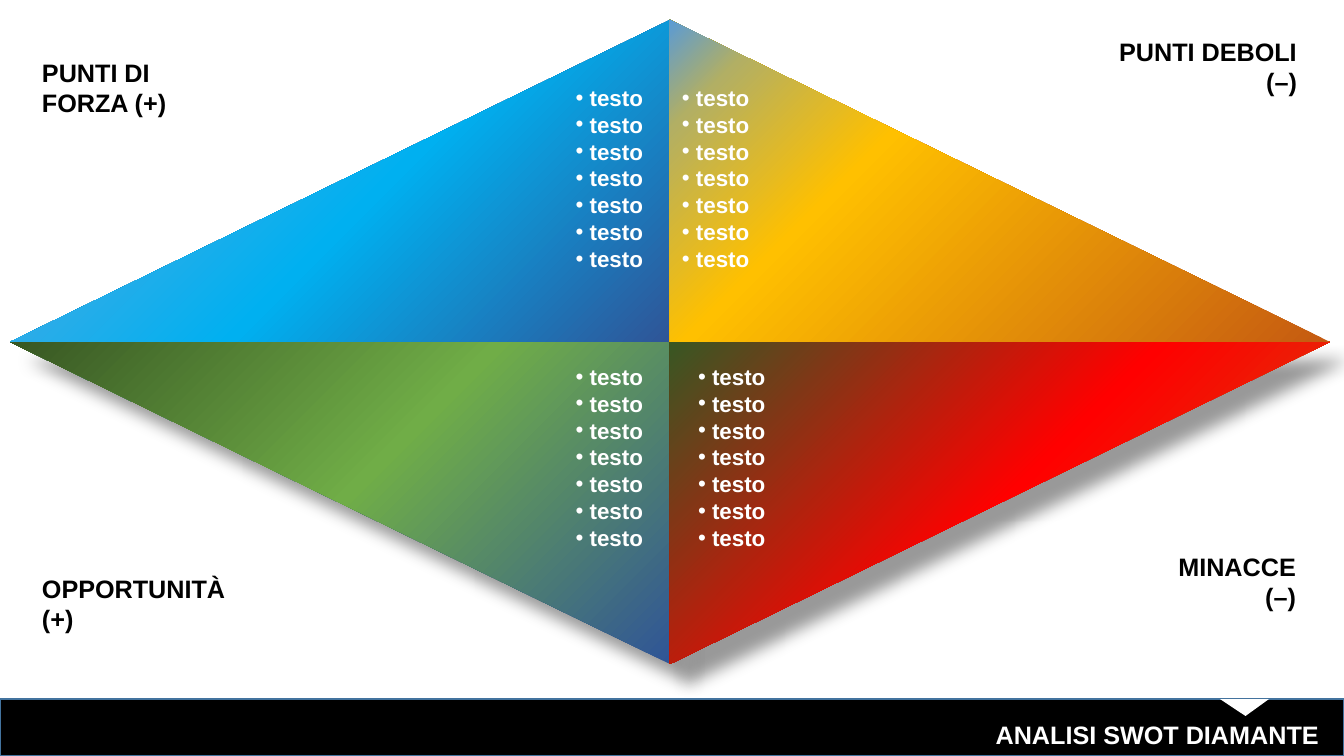
import pptx
import pptx.dml.color
import pptx.enum.shapes
import pptx.enum.text
import pptx.oxml
import pptx.oxml.ns
import pptx.util

PX = 914400 / 100.8  # EMU in one px
LEFT = pptx.enum.text.PP_ALIGN.LEFT
RIGHT = pptx.enum.text.PP_ALIGN.RIGHT
NS = pptx.oxml.ns.nsdecls("a")


def px(n):
    return pptx.util.Emu(round(n * PX))


def rgb(color):
    return pptx.dml.color.RGBColor.from_string(color)


def place(sp, box):
    sp.left, sp.top, sp.width, sp.height = map(px, box)


def write(sp, lines, size, color, align):
    tf = sp.text_frame
    tf.word_wrap = True
    tf.auto_size = pptx.enum.text.MSO_AUTO_SIZE.NONE
    tf.vertical_anchor = pptx.enum.text.MSO_ANCHOR.TOP
    tf.margin_left = tf.margin_right = px(10)
    tf.margin_top = tf.margin_bottom = px(5)
    tf.text = "\n".join(lines)
    for p in tf.paragraphs:
        p.alignment = align
        p.line_spacing = 1
        p.space_before = p.space_after = pptx.util.Pt(0)
        p.font.name, p.font.size, p.font.bold = "Arial", pptx.util.Pt(size), True
        p.font.color.rgb = rgb(color)


def add_footer(s, box):
    x, y, w, h = box
    kinds = pptx.enum.shapes.MSO_SHAPE
    bar = s.shapes.add_shape(kinds.RECTANGLE, *map(px, box))
    notch = s.shapes.add_shape(
        kinds.ISOSCELES_TRIANGLE, px(x + w - 124), px(y), px(49), px(17))
    notch.rotation = 180
    notch.adjustments[0] = 0.48
    for sp, color in ((bar, "000000"), (notch, "FFFFFF")):
        sp.shadow.inherit = False
        sp.fill.solid()
        sp.fill.fore_color.rgb = rgb(color)
    bar.line.color.rgb = rgb("43739E")
    bar.line.width = pptx.util.Pt(1)
    notch.line.fill.background()

    title = s.shapes.title
    place(title, (x + w - 698, y + 15, 683, 40))
    write(title, ["ANALISI SWOT DIAMANTE"], 18, "FFFFFF", RIGHT)
    s.shapes.element.append(title.element)  # in front of the bar


def add_gradient(sp, stops):
    sp.fill.gradient()
    grad = sp.element.spPr.find(pptx.oxml.ns.qn("a:gradFill"))
    for child in list(grad):
        grad.remove(child)
    marks = "".join(
        f'<a:gs pos="{pos * 1000}"><a:srgbClr val="{color}"/></a:gs>'
        for pos, color in stops)
    grad.append(pptx.oxml.parse_xml(f"<a:gsLst {NS}>{marks}</a:gsLst>"))
    grad.append(pptx.oxml.parse_xml(
        f'<a:path {NS} path="circle">'
        '<a:fillToRect r="100000" b="100000"/></a:path>'))


def add_shadow(sp):
    effects = sp.element.spPr.find(pptx.oxml.ns.qn("a:effectLst"))
    effects.append(pptx.oxml.parse_xml(
        f'<a:outerShdw {NS} blurRad="{pptx.util.Pt(12)}" '
        f'dist="{pptx.util.Pt(19)}" dir="2700000" algn="tl" rotWithShape="0">'
        '<a:srgbClr val="000000"><a:alpha val="40000"/></a:srgbClr>'
        '</a:outerShdw>'))


def add_diamond(s, box, quarters):
    x, y, w, h = box
    cx, cy = x + w / 2, y + h / 2
    for side, half, stops in quarters:
        builder = s.shapes.build_freeform(cx, cy + half * h / 2, scale=PX)
        builder.add_line_segments([(cx + side * w / 2, cy), (cx, cy)])
        sp = builder.convert_to_shape()
        add_gradient(sp, stops)
        sp.line.fill.background()
        sp.shadow.inherit = False
        if half > 0:
            add_shadow(sp)


def add_list(s, sp, box, lines, align):
    place(sp, box)
    write(sp, lines, 16, "FFFFFF", align)
    for p in sp.text_frame.paragraphs:
        pPr = p._p.get_or_add_pPr()
        pPr.set("marL", str(px(14)))
        pPr.set("indent", str(px(-14)))
        bullet = pptx.oxml.parse_xml(f'<a:buChar {NS} char="•"/>')
        pPr.insert_element_before(bullet, "a:tabLst", "a:defRPr", "a:extLst")
    s.shapes.element.append(sp.element)  # in front of the diamond


def add_label(s, box, lines, align):
    sp = s.shapes.add_textbox(*map(px, box))
    write(sp, lines, 18, "000000", align)


def build_swot(prs):
    s = prs.slides.add_slide(prs.slide_layouts[4])
    add_footer(s, (0, 699, 1344, 57))

    # Corner labels
    for box, lines, align in (
        ((32, 52, 198, 72), ["PUNTI DI FORZA (+)"], LEFT),
        ((32, 568, 252, 72), ["OPPORTUNITÀ", "(+)"], LEFT),
        ((1080, 31, 227, 72), ["PUNTI DEBOLI (–)"], RIGHT),
        ((1054, 546, 252, 72), ["MINACCE", "(–)"], RIGHT),
    ):
        add_label(s, box, lines, align)

    # Quarters: side (-1 left, 1 right), half (-1 top, 1 bottom), stops
    add_diamond(s, (10, 20, 1320, 644), (
        (-1, 1, ((0, "385723"), (50, "70AD47"), (100, "2F5597"))),
        (-1, -1, ((0, "71A6DB"), (55, "00B0F0"), (100, "2F5597"))),
        (1, 1, ((0, "385723"), (50, "FF0000"), (100, "C55A11"))),
        (1, -1, ((0, "5B9BD5"), (11, "B2AF64"), (34, "FFC000"),
                 (100, "C55A11"))),
    ))

    # Lists inside the quarters
    bodies = [sp for sp in s.placeholders if 1 <= sp.placeholder_format.idx <= 4]
    spots = (
        ((158, 79, 495, 248), RIGHT),
        ((195, 358, 458, 224), RIGHT),
        ((688, 358, 458, 224), LEFT),
        ((672, 79, 458, 224), LEFT),
    )
    for sp, (box, align) in zip(bodies, spots):
        add_list(s, sp, box, ["testo"] * 7, align)


def main():
    prs = pptx.Presentation()
    prs.slide_width, prs.slide_height = px(1344), px(756)
    build_swot(prs)
    prs.save("out.pptx")


if __name__ == "__main__":
    main()
